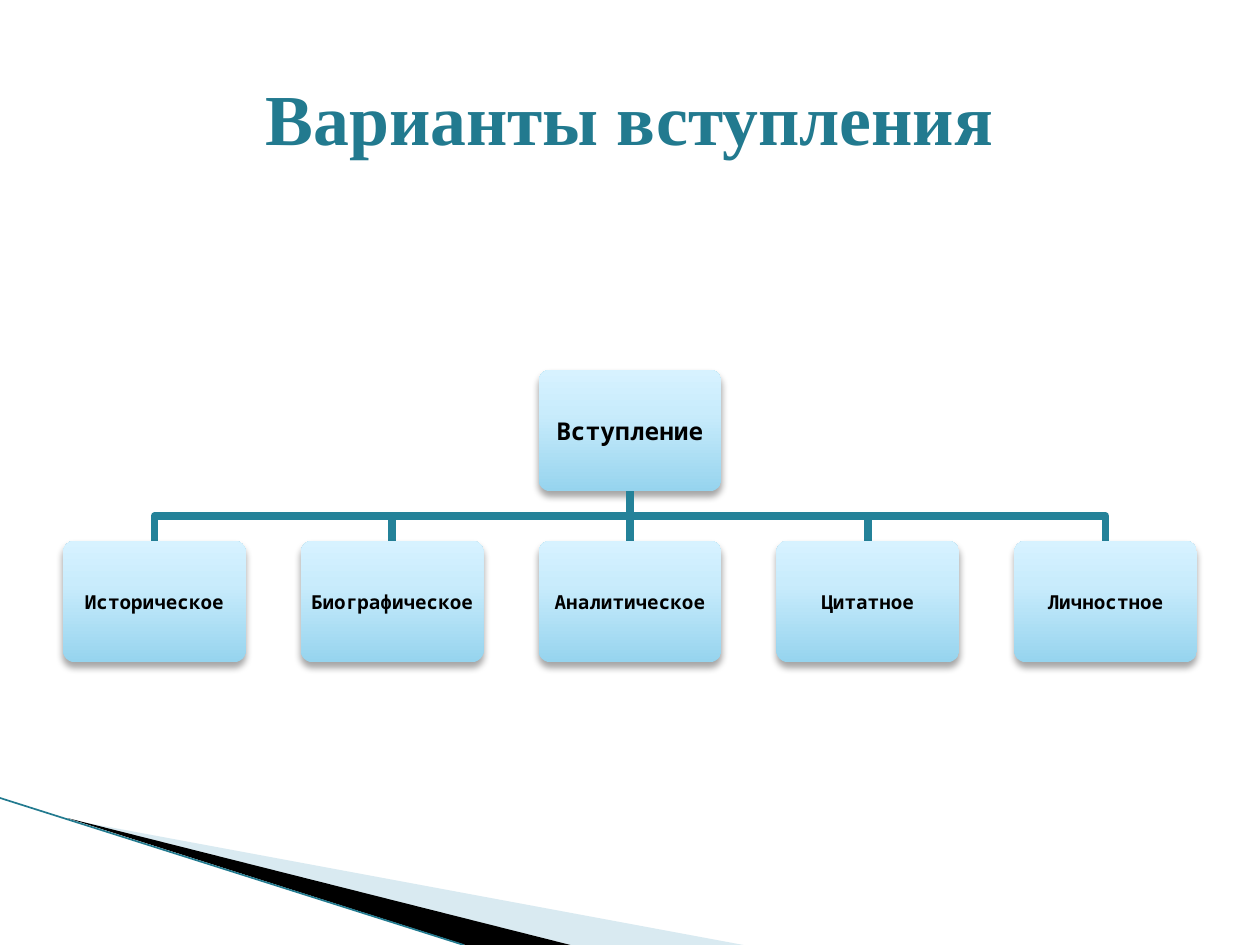
import copy

import pptx
import pptx.dml.color
import pptx.enum.shapes
import pptx.enum.text
import pptx.oxml
import pptx.oxml.ns
import pptx.util

Pt = pptx.util.Pt
Color = pptx.dml.color.RGBColor
qn = pptx.oxml.ns.qn

BLACK = Color(0x00, 0x00, 0x00)
TITLE = Color(0x22, 0x7A, 0x8F)
LINK = Color(0x24, 0x82, 0x99)
PALE = Color(0xA0, 0xCB, 0xDC)
SHADES = [
    (0, Color(0x96, 0xD4, 0xEE)),
    (0.65, Color(0xC9, 0xEC, 0xFC)),
    (1, Color(0xD7, 0xF2, 0xFF)),
]

WIDE, HIGH = 720, 540
EDGE = 36
CARD_W, CARD_H = 104.5, 69.6
ROOT_Y, LEAF_Y = 211.2, 308.9
LEAVES = ["Историческое", "Биографическое", "Аналитическое", "Цитатное", "Личностное"]

SHADOW = (
    '<a:outerShdw xmlns:a="http://schemas.openxmlformats.org/drawingml/2006/main"'
    ' blurRad="50800" dist="38100" dir="5400000" rotWithShape="0">'
    '<a:srgbClr val="000000"><a:alpha val="35000"/></a:srgbClr></a:outerShdw>'
)


class Deck:
    head = "Times New Roman"
    body = "Noto Sans Mono"

    def __init__(self):
        self.show = pptx.Presentation()
        self.show.slide_width, self.show.slide_height = Pt(WIDE), Pt(HIGH)
        self.slide = self.show.slides.add_slide(self.show.slide_layouts[6])

    def label(self, shape, text, size, font, color, inset):
        """Put one centred bold paragraph into a shape."""
        frame = shape.text_frame
        frame.word_wrap = True
        frame.vertical_anchor = pptx.enum.text.MSO_ANCHOR.MIDDLE
        frame.margin_left = frame.margin_right = Pt(inset)
        frame.margin_top = frame.margin_bottom = Pt(inset)
        frame.text = text
        para = frame.paragraphs[0]
        para.alignment = pptx.enum.text.PP_ALIGN.CENTER
        face = para.runs[0].font
        face.name, face.size, face.bold = font, Pt(size), True
        face.color.rgb = color

    def title(self, text):
        box = self.slide.shapes.add_textbox(Pt(EDGE), Pt(21.6), Pt(WIDE - 2 * EDGE), Pt(90))
        self.label(box, text, 41, self.head, TITLE, 3.6)

    def card(self, mid, top, text, size):
        """Draw a shaded card centred on mid."""
        kind = pptx.enum.shapes.MSO_SHAPE.ROUNDED_RECTANGLE
        card = self.slide.shapes.add_shape(
            kind, Pt(mid - CARD_W / 2), Pt(top), Pt(CARD_W), Pt(CARD_H))
        card.adjustments[0] = 0.1
        card.line.fill.background()
        card.fill.gradient()
        card.fill.gradient_angle = 90
        stops = card.element.spPr.find(".//" + qn("a:gsLst"))
        stops.append(copy.deepcopy(stops[-1]))
        for stop, (place, color) in zip(card.fill.gradient_stops, SHADES):
            stop.position, stop.color.rgb = place, color
        card.shadow.inherit = False
        effects = card.element.spPr.find(qn("a:effectLst"))
        effects.append(pptx.oxml.parse_xml(SHADOW))
        self.label(card, text, size, self.body, BLACK, 3)

    def outline(self, points, close):
        start, *rest = [(Pt(x), Pt(y)) for x, y in points]
        form = self.slide.shapes.build_freeform(*start)
        form.add_line_segments(rest, close=close)
        shape = form.convert_to_shape()
        shape.shadow.inherit = False
        return shape

    def wedge(self, points, color, alpha=100):
        shape = self.outline(points, True)
        shape.line.fill.background()
        shape.fill.solid()
        shape.fill.fore_color.rgb = color
        if alpha < 100:
            tint = shape.element.spPr.find(".//" + qn("a:srgbClr"))
            tint.append(tint.makeelement(qn("a:alpha"), {"val": str(alpha * 1000)}))

    def link(self, points):
        shape = self.outline(points, False)
        shape.fill.background()
        shape.line.color.rgb = LINK
        shape.line.width = Pt(4.33)

    def rule(self, x1, y1, x2, y2):
        kind = pptx.enum.shapes.MSO_CONNECTOR.STRAIGHT
        line = self.slide.shapes.add_connector(kind, Pt(x1), Pt(y1), Pt(x2), Pt(y2))
        line.line.color.rgb = TITLE
        line.line.width = Pt(0.95)
        props = line.element.spPr
        props.append(props.makeelement(qn("a:effectLst")))


def main():
    deck = Deck()
    deck.wedge([(39.6, 468.4), (424.8, HIGH), (326, HIGH)], PALE, 40)
    deck.wedge([(38.5, 467.5), (326, HIGH), (266, HIGH)], BLACK)
    deck.rule(0, 456, 265, HIGH)

    center = WIDE / 2
    deck.card(center, ROOT_Y, "Вступление", 14)
    base = ROOT_Y + CARD_H
    bend = (base + LEAF_Y) / 2
    first = EDGE + CARD_W / 2
    step = (WIDE - 2 * first) / (len(LEAVES) - 1)
    for i, name in enumerate(LEAVES):
        mid = first + i * step
        if mid == center:
            deck.link([(center, base), (center, LEAF_Y)])
        else:
            deck.link([(center, base), (center, bend), (mid, bend), (mid, LEAF_Y)])
        deck.card(mid, LEAF_Y, name, 11)

    deck.title("Варианты вступления")
    deck.show.save("out.pptx")


if __name__ == "__main__":
    main()
